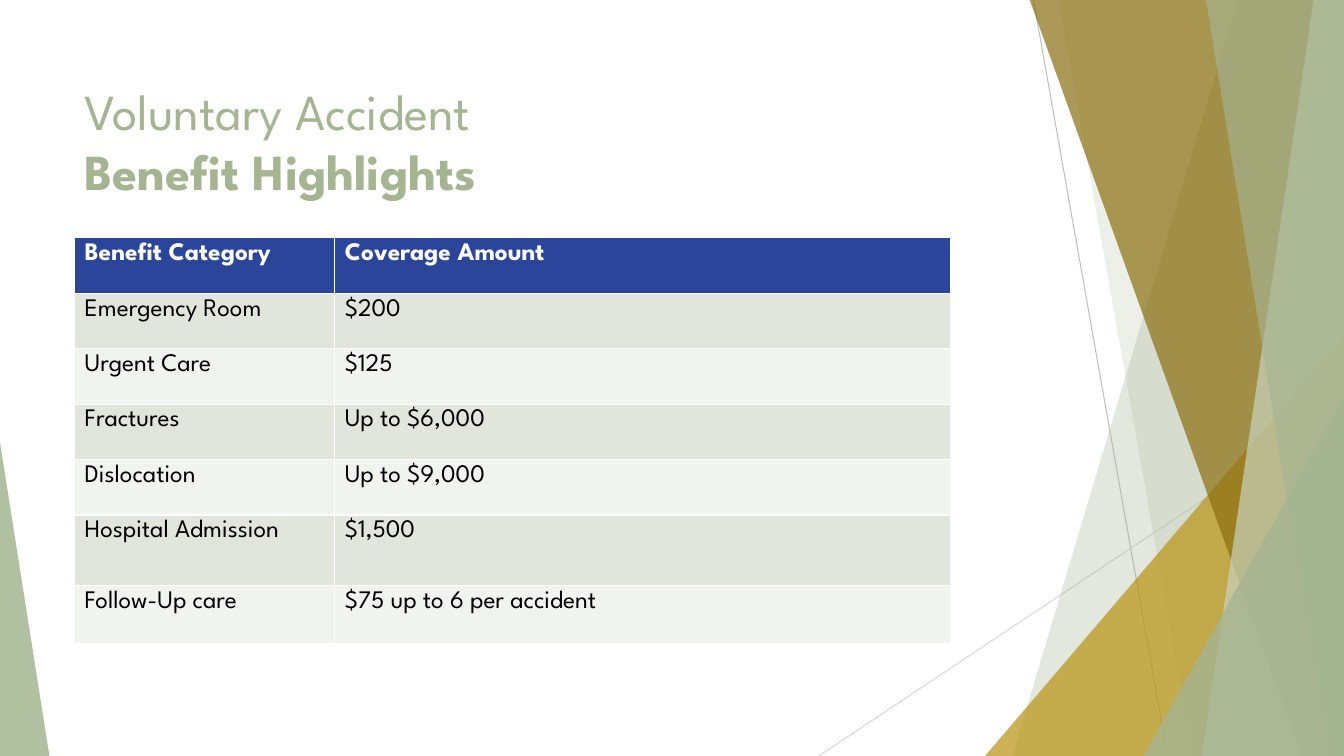
from pptx import Presentation
from pptx.dml.color import RGBColor as RGB
from pptx.enum.shapes import MSO_CONNECTOR as CONN, MSO_SHAPE as SHAPE
from pptx.enum.text import MSO_ANCHOR as ANCHOR, PP_ALIGN as ALIGN
from pptx.oxml.ns import qn
from pptx.util import Pt
from lxml.etree import SubElement

PX = 9144
THEME = {
    "font": "League Spartan", "title_size": 36, "table_size": 18,
    "sage": "A5B592", "mist": "C9D3BE", "gold": "B99415", "bronze": "8B6F10",
    "line": "BFBFBF", "pale_line": "D9D9D9", "white": "FFFFFF", "black": "000000",
    "header": "2A459A", "odd_row": "E1E5DC", "even_row": "F0F3EE",
}


def paint(sp, color, alpha):
    sp.shadow.inherit = False
    sp.line.fill.background()
    sp.fill.solid()
    sp.fill.fore_color.rgb = RGB.from_string(THEME[color])
    clr = sp.fill._xPr.find(qn("a:solidFill"))[0]
    SubElement(clr, qn("a:alpha")).set("val", str(alpha * 1000))


def style(r, size, color, bold):
    r.font.name = THEME["font"]
    r.font.size = Pt(THEME[size])
    r.font.color.rgb = RGB.from_string(THEME[color])
    r.font.bold = bold


prs = Presentation()
prs.slide_width, prs.slide_height = 1333 * PX, 750 * PX
s = prs.slides.add_slide(prs.slide_layouts[5])

for x1, y1, x2, y2, color in [
    (1025, 0, 1158, 750, "line"),
    (1333, 403, 812, 750, "pale_line"),
]:
    c = s.shapes.add_connector(CONN.STRAIGHT, x1 * PX, y1 * PX, x2 * PX, y2 * PX)
    c.line.color.rgb = RGB.from_string(THEME[color])
    c.line.width = Pt(0.75)
    SubElement(c._element.spPr, qn("a:effectLst"))

bands = [
    (1228, 1004, "sage", 30),
    (1050, 1183, "sage", 20),
    (977, 333, 356, 417, 1, "gold", 72),
    (1021, 1291, "bronze", 70),
    (1303, 1192, "mist", 70),
    (1196, 1318, "sage", 65),
    (1134, 393, 199, 357, 1, "sage", 80),
    (0, 439, 49, 311, 0, "sage", 85),
]
for *geometry, color, alpha in bands:
    if len(geometry) == 2:
        top, bottom = geometry
        fb = s.shapes.build_freeform(top, -1, scale=PX)
        fb.add_line_segments([(1333, -1), (1333, 750), (bottom, 750)])
        sp = fb.convert_to_shape()
    else:
        *box, apex = geometry
        sp = s.shapes.add_shape(SHAPE.ISOSCELES_TRIANGLE, *(v * PX for v in box))
        sp.adjustments[0] = apex
    paint(sp, color, alpha)

title = s.shapes.title
title.left, title.top, title.width, title.height = (v * PX for v in (74, 67, 940, 144))
tf = title.text_frame
tf.text = "Voluntary Accident\vBenefit Highlights"
tf.word_wrap = True
tf.vertical_anchor = ANCHOR.MIDDLE
p = tf.paragraphs[0]
p.alignment = ALIGN.LEFT
for r, bold in zip(p.runs, (False, True)):
    style(r, "title_size", "sage", bold)

rows = [
    ("Benefit Category", "Coverage Amount"),
    ("Emergency Room", "$200"),
    ("Urgent Care", "$125"),
    ("Fractures", "Up to $6,000"),
    ("Dislocation", "Up to $9,000"),
    ("Hospital Admission", "$1,500"),
    ("Follow-Up care", "$75 up to 6 per accident"),
]
heights = [55] * 5 + [70, 58]
table = s.shapes.add_table(len(rows), 2, 74 * PX, 236 * PX, 869 * PX, sum(heights) * PX).table
for col, width in zip(table.columns, (258, 611)):
    col.width = width * PX
for i, (row, height) in enumerate(zip(rows, heights)):
    table.rows[i].height = height * PX
    is_header = i == 0
    fill = "header" if is_header else "odd_row" if i % 2 else "even_row"
    for j, text in enumerate(row):
        cell = table.cell(i, j)
        cell.fill.solid()
        cell.fill.fore_color.rgb = RGB.from_string(THEME[fill])
        cell.text_frame.text = text
        r = cell.text_frame.paragraphs[0].runs[0]
        style(r, "table_size", "white" if is_header else "black", is_header)

prs.save("out.pptx")
